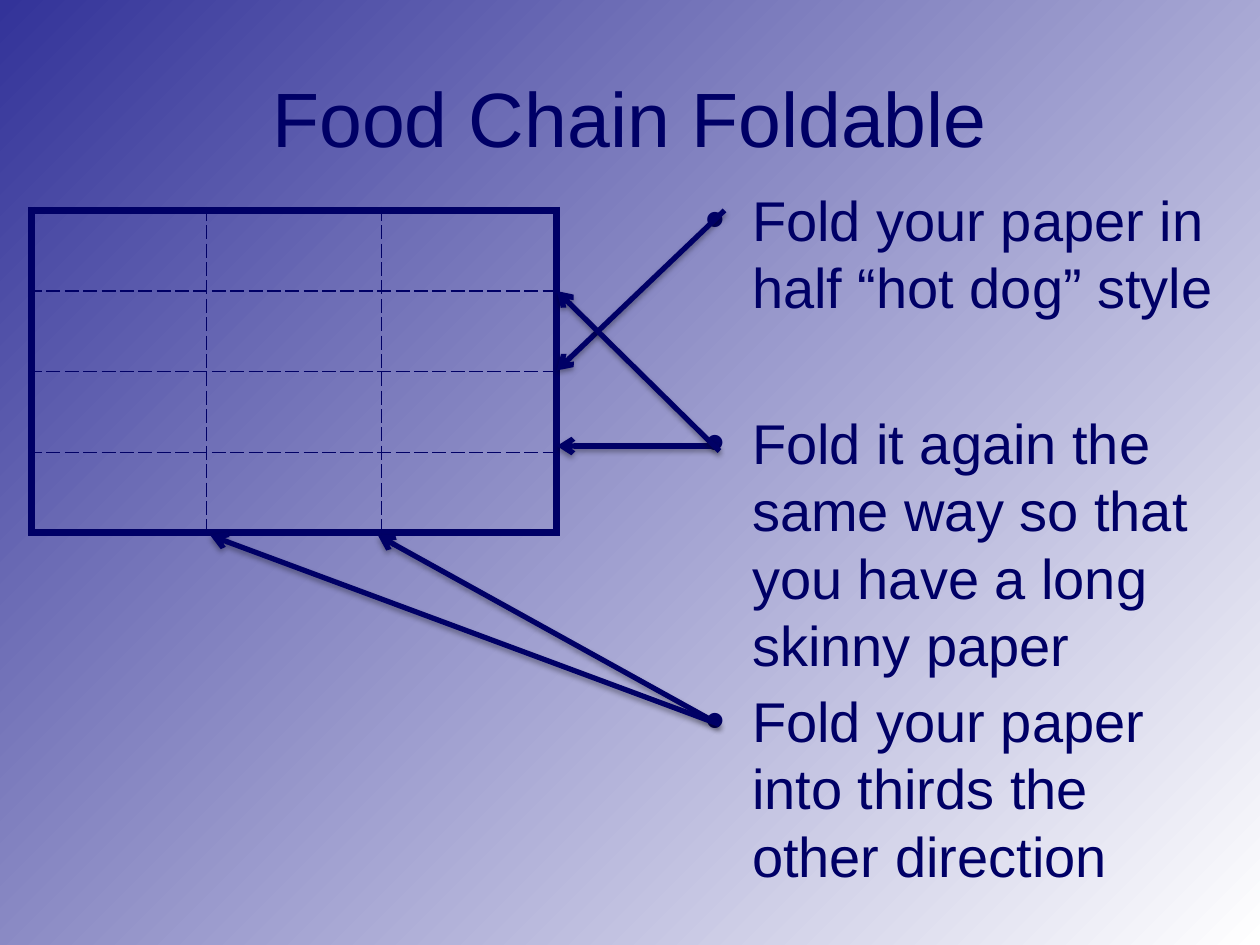
from dataclasses import dataclass

from lxml import etree
from pptx import Presentation
from pptx.dml.color import RGBColor
from pptx.enum.shapes import MSO_CONNECTOR
from pptx.enum.text import MSO_ANCHOR, PP_ALIGN
from pptx.oxml import parse_xml
from pptx.oxml.ns import nsdecls, qn
from pptx.util import Inches, Pt

STRAIGHT = MSO_CONNECTOR.STRAIGHT
MIDDLE = MSO_ANCHOR.MIDDLE
CENTER = PP_ALIGN.CENTER
LEFT = PP_ALIGN.LEFT


@dataclass(frozen=True)
class Theme:
    font: str = "Arial"
    ink: str = "000066"
    start: str = "333399"
    end: str = "FFFFFF"
    title: int = 44
    body: int = 32
    line_pitch: float = 38.5
    outline: float = 4.5
    fold: float = 1
    arrow: float = 3


theme = Theme()


def write(para, text, size, align=LEFT, before=0, pitch=None, bullet=False):
    para.alignment = align
    para.space_before = Pt(before)
    if pitch:
        para.line_spacing = Pt(pitch)
    span = para.add_run()
    span.text = text
    span.font.name = theme.font
    span.font.size = Pt(size)
    span.font.color.rgb = RGBColor.from_string(theme.ink)
    if bullet:
        props = para._p.get_or_add_pPr()
        props.set("marL", str(Inches(0.37)))
        props.set("indent", str(-Inches(0.37)))
        etree.SubElement(props, qn("a:buFont"), typeface=theme.font)
        etree.SubElement(props, qn("a:buChar"), char="•")


def add_border(cell, side, width, dash):
    cell._tc.get_or_add_tcPr().append(parse_xml(
        f'<a:ln{side} {nsdecls("a")} w="{Pt(width)}">'
        f'<a:solidFill><a:srgbClr val="{theme.ink}"/></a:solidFill>'
        f'<a:prstDash val="{dash}"/></a:ln{side}>'))


deck = Presentation()
deck.slide_width, deck.slide_height = Inches(10), Inches(7.5)
page = deck.slides.add_slide(deck.slide_layouts[5])

backdrop = page.background.fill
backdrop.gradient()
backdrop.gradient_angle = 315
for stop, position, color in zip(backdrop.gradient_stops, (0, 1), (theme.start, theme.end)):
    stop.position = position
    stop.color.rgb = RGBColor.from_string(color)

title = page.shapes.title
title.left, title.top = Inches(0.5), Inches(0.3)
title.width, title.height = Inches(9), Inches(1.25)
title.text_frame.vertical_anchor = MIDDLE
write(title.text_frame.paragraphs[0], "Food Chain Foldable", theme.title, align=CENTER)

steps = [
    ("Fold your paper in half “hot dog” style", 0),
    ("Fold it again the same way so that you have a long skinny paper", 50.5),
    ("Fold your paper into thirds the other direction", 5),
]
steps_box = page.shapes.add_textbox(Inches(5.5), Inches(1.42), Inches(4.25), Inches(5.75))
steps_frame = steps_box.text_frame
steps_frame.word_wrap = True
for index, (text, before) in enumerate(steps):
    para = steps_frame.add_paragraph() if index else steps_frame.paragraphs[0]
    write(para, text, theme.body, before=before, pitch=theme.line_pitch, bullet=True)

ROWS, COLUMNS = 4, 3
paper = page.shapes.add_table(
    ROWS, COLUMNS, Inches(0.25), Inches(1.67), Inches(4.17), Inches(2.56)).table
paper.first_row = False
paper.horz_banding = False
for row in range(ROWS):
    for column in range(COLUMNS):
        cell = paper.cell(row, column)
        on_edge = {"L": column == 0, "R": column == COLUMNS - 1,
                   "T": row == 0, "B": row == ROWS - 1}
        for side, outer in on_edge.items():
            if outer:
                add_border(cell, side, theme.outline, "solid")
            else:
                add_border(cell, side, theme.fold, "sysDash")
        cell.fill.background()

arrows = [
    ((5.75, 1.67), (4.42, 2.94)),
    ((5.71, 3.54), (4.42, 3.54)),
    ((5.71, 5.75), (3, 4.25)),
    ((5.71, 5.75), (1.67, 4.25)),
    ((5.71, 3.58), (4.42, 2.31)),
]
for start, end in arrows:
    arrow = page.shapes.add_connector(
        STRAIGHT, *(Inches(value) for value in start + end))
    arrow.line.color.rgb = RGBColor.from_string(theme.ink)
    arrow.line.width = Pt(theme.arrow)
    etree.SubElement(arrow.line._get_or_add_ln(), qn("a:tailEnd"), type="arrow")
    arrow._element.spPr.append(parse_xml(
        f'<a:effectLst {nsdecls("a")}>'
        f'<a:outerShdw blurRad="{Pt(3.1)}" dist="{Pt(1.8)}" dir="5400000" rotWithShape="0">'
        '<a:srgbClr val="000000"><a:alpha val="35000"/></a:srgbClr>'
        '</a:outerShdw></a:effectLst>'))

deck.save("out.pptx")
